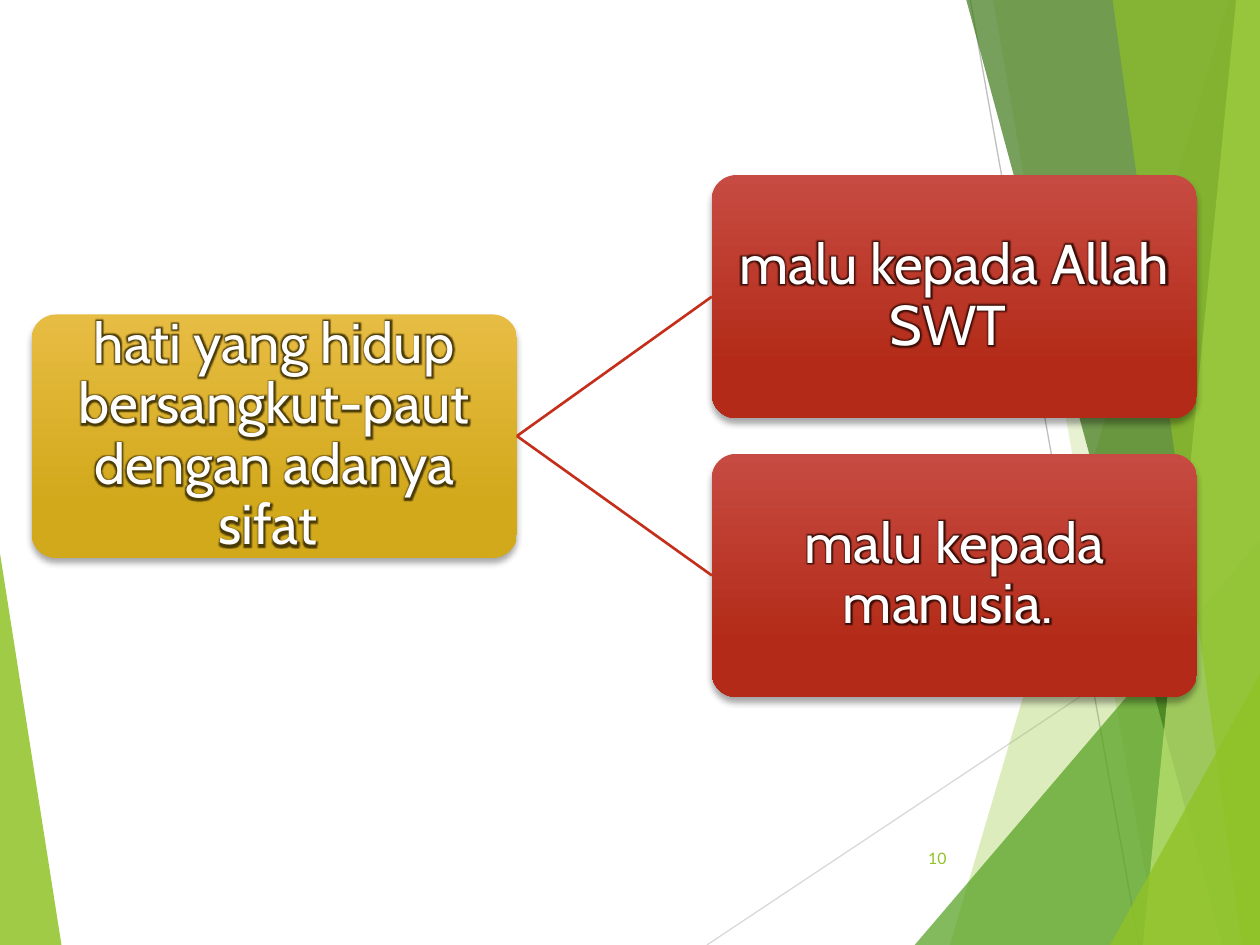
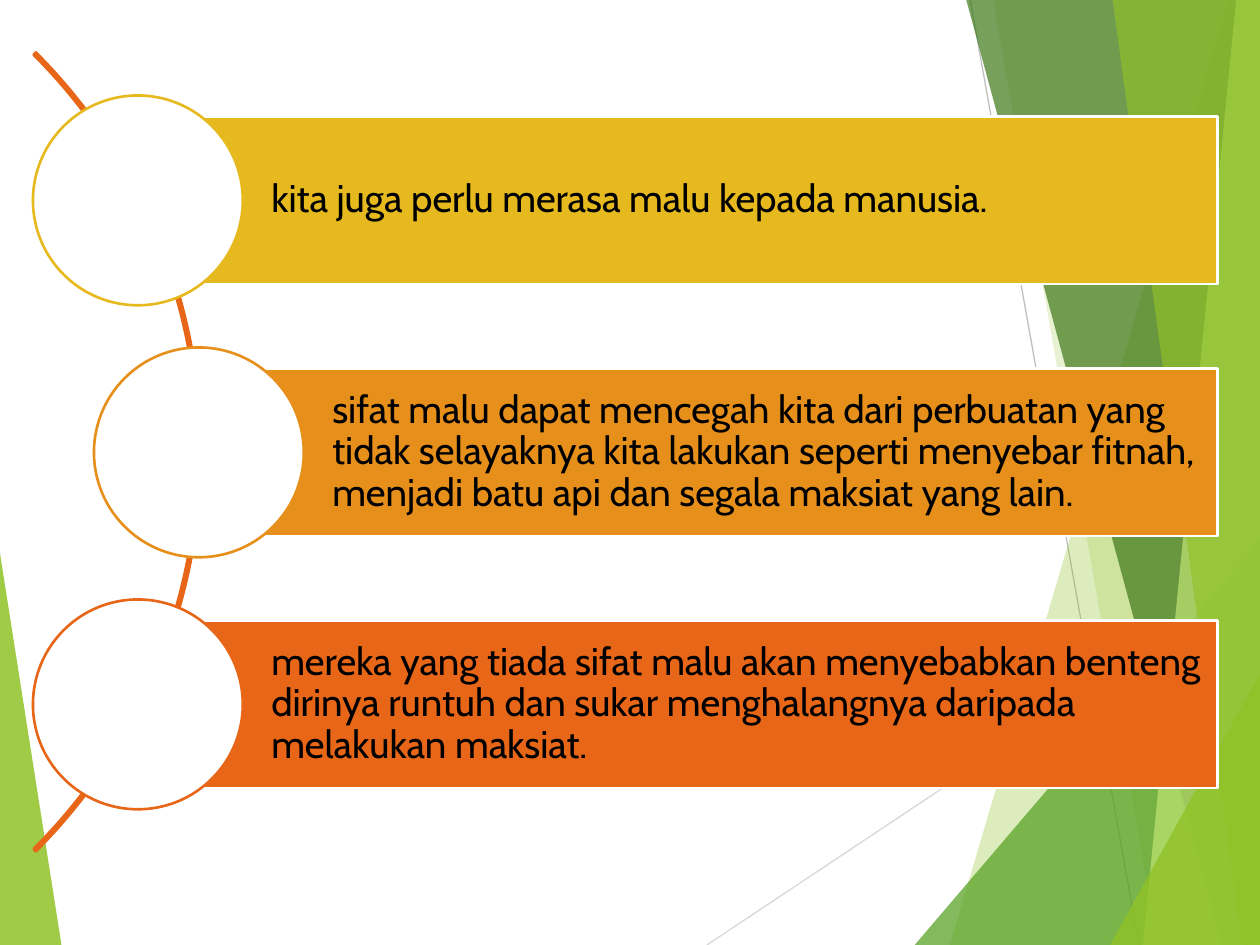
from lxml import etree
from pptx import Presentation
from pptx import util as u
from pptx.dml.color import RGBColor
from pptx.enum import shapes, text
from pptx.oxml import ns

WIDTH, HEIGHT = 25.4, 19.05
WHITE = RGBColor(0xFF, 0xFF, 0xFF)
BLACK = RGBColor(0, 0, 0)
LIME = RGBColor(0x90, 0xC2, 0x26)
GREEN = RGBColor(0x54, 0xA0, 0x21)
FOREST = RGBColor(0x3F, 0x78, 0x19)
PALE_LIME = RGBColor(0xC0, 0xE4, 0x74)
SILVER = RGBColor(0xD9, 0xD9, 0xD9)
GREY = RGBColor(0xBF, 0xBF, 0xBF)
GOLD_TOP = RGBColor(0xE7, 0xBC, 0x43)
GOLD_BASE = RGBColor(0xD2, 0xA9, 0x1B)
GOLD_GLOW = RGBColor(0x4A, 0x3A, 0x06)
RED_TOP = RGBColor(0xC7, 0x4B, 0x42)
RED_BASE = RGBColor(0xB3, 0x2B, 0x18)
RED_GLOW = RGBColor(0x3E, 0x0E, 0x08)
RED_LINE = RGBColor(0xC4, 0x2F, 0x1A)
YELLOW = RGBColor(0xE6, 0xB9, 0x1E)
AMBER = RGBColor(0xE6, 0x90, 0x1B)
ORANGE = RGBColor(0xE7, 0x66, 0x18)

CARD_W, CARD_H = 9.78, 4.9
BAR_H, BAR_RIGHT, BAR_TOP, BAR_STEP = 3.38, 24.54, 2.35, 5.08
CIRCLE = 4.23

CARD_FRAME = {"margin_left": u.Cm(0.05), "margin_right": u.Cm(0.05),
              "margin_top": u.Cm(0.05), "margin_bottom": u.Cm(0.05)}
BAR_FRAME = {"margin_left": u.Cm(2.69), "margin_right": u.Cm(0.15),
             "margin_top": u.Cm(0.15), "margin_bottom": u.Cm(0.15)}
CARD_FONT = {"name": "Cabin", "size": u.Pt(32)}
BAR_FONT = {"name": "Cabin", "size": u.Pt(22)}
NUMBER_FONT = {"name": "Lato", "size": u.Pt(9)}


def apply(target, formats):
    for key, value in formats.items():
        setattr(target, key, value)


def child(parent, tag, **values):
    return etree.SubElement(parent, ns.qn(tag), values)


def set_alpha(fill_parent, percent):
    colour = next(fill_parent.iter(ns.qn("a:srgbClr")))
    child(colour, "a:alpha", val=str(percent * 1000))


def paint(shape, fill, line=None):
    shape.shadow.inherit = False
    shape.fill.solid()
    shape.fill.fore_color.rgb = fill
    if line is None:
        shape.line.fill.background()
    else:
        shape.line.color.rgb = line
        shape.line.width = u.Pt(1.5)


def add_preset(slide, kind, left, top, width, height):
    return slide.shapes.add_shape(kind, u.Cm(left), u.Cm(top), u.Cm(width), u.Cm(height))


def write(shape, words, font, colour, align, frame, spacing=0.9):
    body = shape.text_frame
    apply(body, {"word_wrap": True, "vertical_anchor": text.MSO_ANCHOR.MIDDLE, **frame})
    paragraph = body.paragraphs[0]
    apply(paragraph, {"alignment": align, "line_spacing": spacing})
    run = paragraph.add_run()
    run.text = words
    apply(run.font, font)
    run.font.color.rgb = colour
    return run


def add_facet(slide, corners, colour, opacity):
    points = [(u.Cm(x), u.Cm(y)) for x, y in corners]
    builder = slide.shapes.build_freeform(*points[0], scale=1.0)
    builder.add_line_segments(points[1:], close=True)
    facet = builder.convert_to_shape()
    paint(facet, colour)
    set_alpha(facet.element.spPr, opacity)


def add_line(slide, start, end, colour, width):
    line = slide.shapes.add_connector(
        shapes.MSO_CONNECTOR.STRAIGHT, *(u.Cm(v) for v in (*start, *end)))
    line.line.color.rgb = colour
    line.line.width = u.Pt(width)
    child(line.element.spPr, "a:effectLst")
    return line


def band(top_x, bottom_x):
    return [(top_x, 0), (bottom_x, HEIGHT), (WIDTH, HEIGHT), (WIDTH, 0)]


def corner(bottom_x, right_y):
    return [(bottom_x, HEIGHT), (WIDTH, right_y), (WIDTH, HEIGHT)]


def add_backdrop(slide):
    add_facet(slide, [(0, 11.15), (1.24, HEIGHT), (0, HEIGHT)], LIME, 85)
    add_line(slide, (14.25, HEIGHT), (WIDTH, 11.63), SILVER, 0.75)
    add_line(slide, (19.56, 0), (22.96, HEIGHT), GREY, 0.75)
    for corners, colour, opacity in (
        (band(24.77, 19.15), LIME, 30),
        (band(20.02, 23.34), LIME, 20),
        (corner(18.44, 10.9), GREEN, 72),
        (band(19.48, 24.64), FOREST, 70),
        (band(24.92, 23.04), PALE_LIME, 70),
        (band(22.43, 25.04), LIME, 65),
        (corner(22.38, 13.59), LIME, 80),
    ):
        add_facet(slide, corners, colour, opacity)


def add_page_number(slide, number):
    box = slide.shapes.add_textbox(u.Cm(17.91), u.Cm(16.79), u.Cm(1.42), u.Cm(1.02))
    write(box, number, NUMBER_FONT, LIME, text.PP_ALIGN.RIGHT, {}, 1.0)


def add_shadow(shape):
    shape.shadow.inherit = False
    effects = shape.element.spPr.find(ns.qn("a:effectLst"))
    shadow = child(effects, "a:outerShdw", blurRad=str(u.Pt(4)), dist=str(u.Pt(3)),
                   dir="5400000", rotWithShape="0")
    child(child(shadow, "a:srgbClr", val=str(BLACK)), "a:alpha", val="35000")


def add_glow(run, colour):
    effects = etree.Element(ns.qn("a:effectLst"))
    child(child(effects, "a:glow", rad=str(u.Pt(4))), "a:srgbClr", val=str(colour))
    run.font._element.find(ns.qn("a:solidFill")).addnext(effects)


def add_card(slide, left, top, words, upper, lower, glow):
    card = add_preset(slide, shapes.MSO_SHAPE.ROUNDED_RECTANGLE, left, top, CARD_W, CARD_H)
    card.adjustments[0] = 0.1
    card.line.fill.background()
    card.fill.gradient()
    card.fill.gradient_angle = 270
    for stop, position, colour in zip(card.fill.gradient_stops, (0, 0.78), (upper, lower)):
        stop.position = position
        stop.color.rgb = colour
    add_shadow(card)
    add_glow(write(card, words, CARD_FONT, WHITE, text.PP_ALIGN.CENTER, CARD_FRAME), glow)
    return card


def add_branch(slide, root, leaf):
    branch = add_line(slide, (0, 0), (1, 1), RED_LINE, 1.5)
    branch.begin_connect(root, 3)
    branch.end_connect(leaf, 1)


def add_arc(slide):
    arc = add_preset(slide, shapes.MSO_SHAPE.BLOCK_ARC, -18.72, -2.28, 22.78, 22.78)
    for index, value in enumerate((189, 27, 0.003)):
        arc.adjustments[index] = value
    paint(arc, ORANGE, ORANGE)


def add_point(slide, row, left, colour, words):
    top = BAR_TOP + row * BAR_STEP
    bar = add_preset(slide, shapes.MSO_SHAPE.RECTANGLE, left, top, BAR_RIGHT - left, BAR_H)
    paint(bar, colour, WHITE)
    write(bar, words, BAR_FONT, BLACK, text.PP_ALIGN.LEFT, BAR_FRAME)
    circle = add_preset(slide, shapes.MSO_SHAPE.OVAL, left - CIRCLE / 2,
                        top + (BAR_H - CIRCLE) / 2, CIRCLE, CIRCLE)
    paint(circle, WHITE, colour)


def build_shame_kinds(slide):
    add_page_number(slide, "10")
    root = add_card(slide, 0.64, 6.34, "hati yang hidup bersangkut-paut dengan adanya sifat ",
                    GOLD_TOP, GOLD_BASE, GOLD_GLOW)
    for top, words in ((3.53, "malu kepada Allah SWT "), (9.15, "malu kepada manusia. ")):
        leaf = add_card(slide, 14.35, top, words, RED_TOP, RED_BASE, RED_GLOW)
        add_branch(slide, root, leaf)


def build_shame_reasons(slide):
    add_arc(slide)
    points = (
        (2.78, YELLOW, "kita juga perlu merasa malu kepada manusia."),
        (4.01, AMBER, "sifat malu dapat mencegah kita dari perbuatan yang tidak selayaknya "
                      "kita lakukan seperti menyebar fitnah, menjadi batu api dan segala "
                      "maksiat yang lain."),
        (2.78, ORANGE, "mereka yang tiada sifat malu akan menyebabkan benteng dirinya runtuh "
                       "dan sukar menghalangnya daripada melakukan maksiat."),
    )
    for row, (left, colour, words) in enumerate(points):
        add_point(slide, row, left, colour, words)


def main():
    deck = Presentation()
    apply(deck, {"slide_width": u.Cm(WIDTH), "slide_height": u.Cm(HEIGHT)})
    for build in (build_shame_kinds, build_shame_reasons):
        slide = deck.slides.add_slide(deck.slide_layouts[6])
        add_backdrop(slide)
        build(slide)
    deck.save("out.pptx")


if __name__ == "__main__":
    main()
